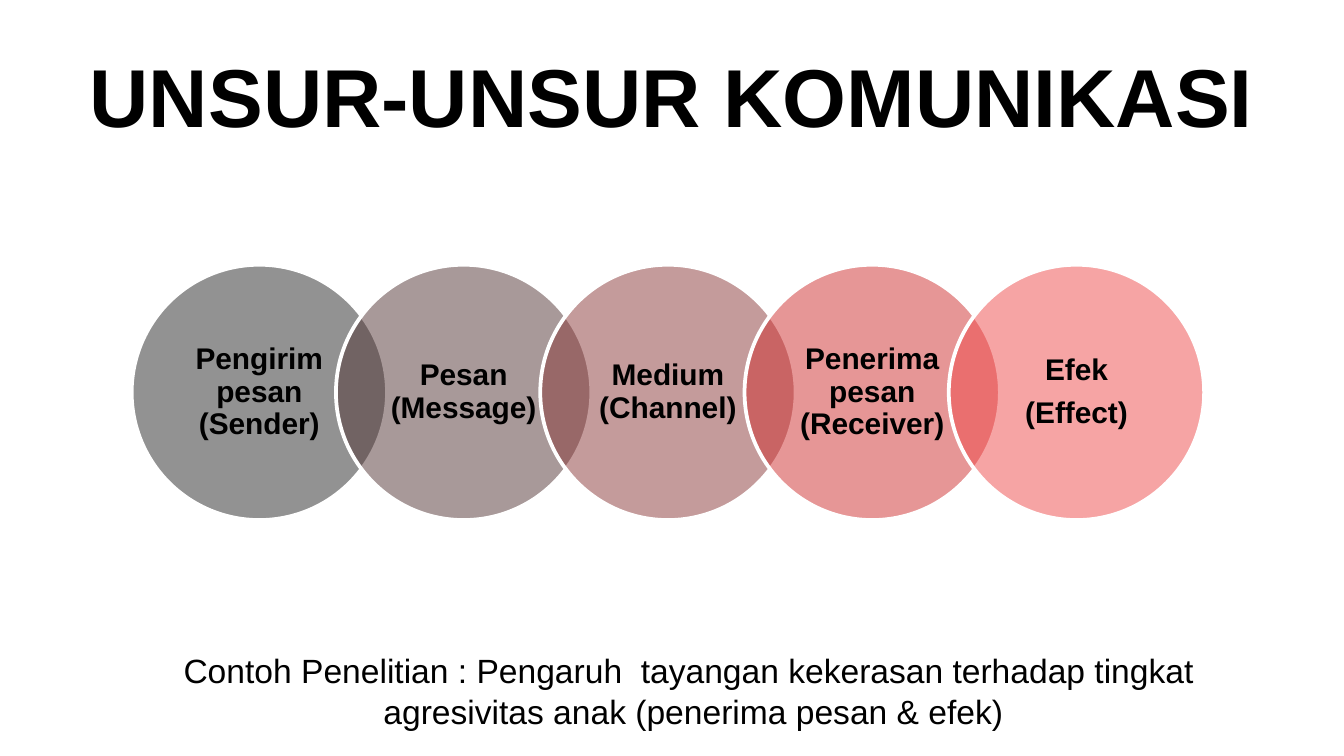
from lxml.etree import SubElement
from pptx import Presentation
from pptx.dml.color import RGBColor
from pptx.enum.shapes import MSO_SHAPE
from pptx.enum.text import MSO_ANCHOR, MSO_AUTO_SIZE, PP_ALIGN
from pptx.oxml.ns import qn
from pptx.util import Inches, Pt

TITLE = "UNSUR-UNSUR KOMUNIKASI"
ELEMENTS = [
    ("sender", ["Pengirim pesan (Sender)"]),
    ("message", ["Pesan (Message)"]),
    ("channel", ["Medium (Channel)"]),
    ("receiver", ["Penerima pesan (Receiver)"]),
    ("effect", ["Efek", "(Effect)"]),
]
EXAMPLE = [
    "Contoh Penelitian : Pengaruh  tayangan kekerasan terhadap tingkat ",
    "agresivitas anak (penerima pesan & efek)",
]
COLORS = {
    "text": "000000",
    "outline": "FFFFFF",
    "sender": "262626",
    "message": "523535",
    "channel": "8A3939",
    "receiver": "CF2F2F",
    "effect": "EF4A4A",
}
FONT = "Arial"
OPACITY = 50

WIDTH = 10
HEIGHT = WIDTH * 9 / 16
DIAMETER = 1.9
STEP = 0.8 * DIAMETER  # each circle overlaps the previous one by a fifth
CHAIN_LEFT, CHAIN_TOP = 0.98, 1.97
LABEL_SIDE = 1.34
LABEL_INSET = (DIAMETER - LABEL_SIDE) / 2


def color(key):
    return RGBColor.from_string(COLORS[key])


def write(frame, lines, size, bold=False):
    """Fill a text frame with centred paragraphs and return them."""
    frame.word_wrap = True
    for number, line in enumerate(lines):
        paragraph = frame.add_paragraph() if number else frame.paragraphs[0]
        paragraph.alignment = PP_ALIGN.CENTER
        run = paragraph.add_run()
        run.text = line
        run.font.name = FONT
        run.font.size = Pt(size)
        run.font.bold = bold
        run.font.color.rgb = color("text")
    return frame.paragraphs


def add_circle(shapes, left, key):
    circle = shapes.add_shape(MSO_SHAPE.OVAL, Inches(left), Inches(CHAIN_TOP),
                              Inches(DIAMETER), Inches(DIAMETER))
    circle.shadow.inherit = False
    circle.fill.solid()
    circle.fill.fore_color.rgb = color(key)
    fill_color = circle.element.spPr.find(qn("a:solidFill"))[0]
    SubElement(fill_color, qn("a:alpha")).set("val", str(OPACITY * 1000))
    circle.line.color.rgb = color("outline")
    circle.line.width = Pt(2)


def add_label(shapes, left, lines):
    label = shapes.add_textbox(
        Inches(left + LABEL_INSET), Inches(CHAIN_TOP + LABEL_INSET),
        Inches(LABEL_SIDE), Inches(LABEL_SIDE))
    frame = label.text_frame
    frame.vertical_anchor = MSO_ANCHOR.MIDDLE
    frame.margin_left = frame.margin_right = Inches(0.1)
    frame.margin_top = frame.margin_bottom = Inches(0.02)
    for paragraph in write(frame, lines, 16, bold=True):
        paragraph.line_spacing = 0.9
        paragraph.space_after = Pt(5.6)


def main():
    presentation = Presentation()
    presentation.slide_width = Inches(WIDTH)
    presentation.slide_height = Inches(HEIGHT)
    slide = presentation.slides.add_slide(presentation.slide_layouts[5])

    title = slide.shapes.title
    title.left, title.top = Inches(0.5), Inches(0.12)
    title.width, title.height = Inches(9), Inches(1)
    title.text_frame.vertical_anchor = MSO_ANCHOR.BOTTOM
    title.text_frame.auto_size = MSO_AUTO_SIZE.NONE
    write(title.text_frame, [TITLE], 44, bold=True)

    example = slide.shapes.add_textbox(Inches(0.83), Inches(4.79),
                                       Inches(8.66), Inches(0.71))
    example.text_frame.auto_size = MSO_AUTO_SIZE.SHAPE_TO_FIT_TEXT
    write(example.text_frame, EXAMPLE, 18)

    chain = slide.shapes.add_group_shape()
    for column, (key, lines) in enumerate(ELEMENTS):
        left = CHAIN_LEFT + column * STEP
        add_circle(chain.shapes, left, key)
        add_label(chain.shapes, left, lines)

    presentation.save("out.pptx")


if __name__ == "__main__":
    main()
